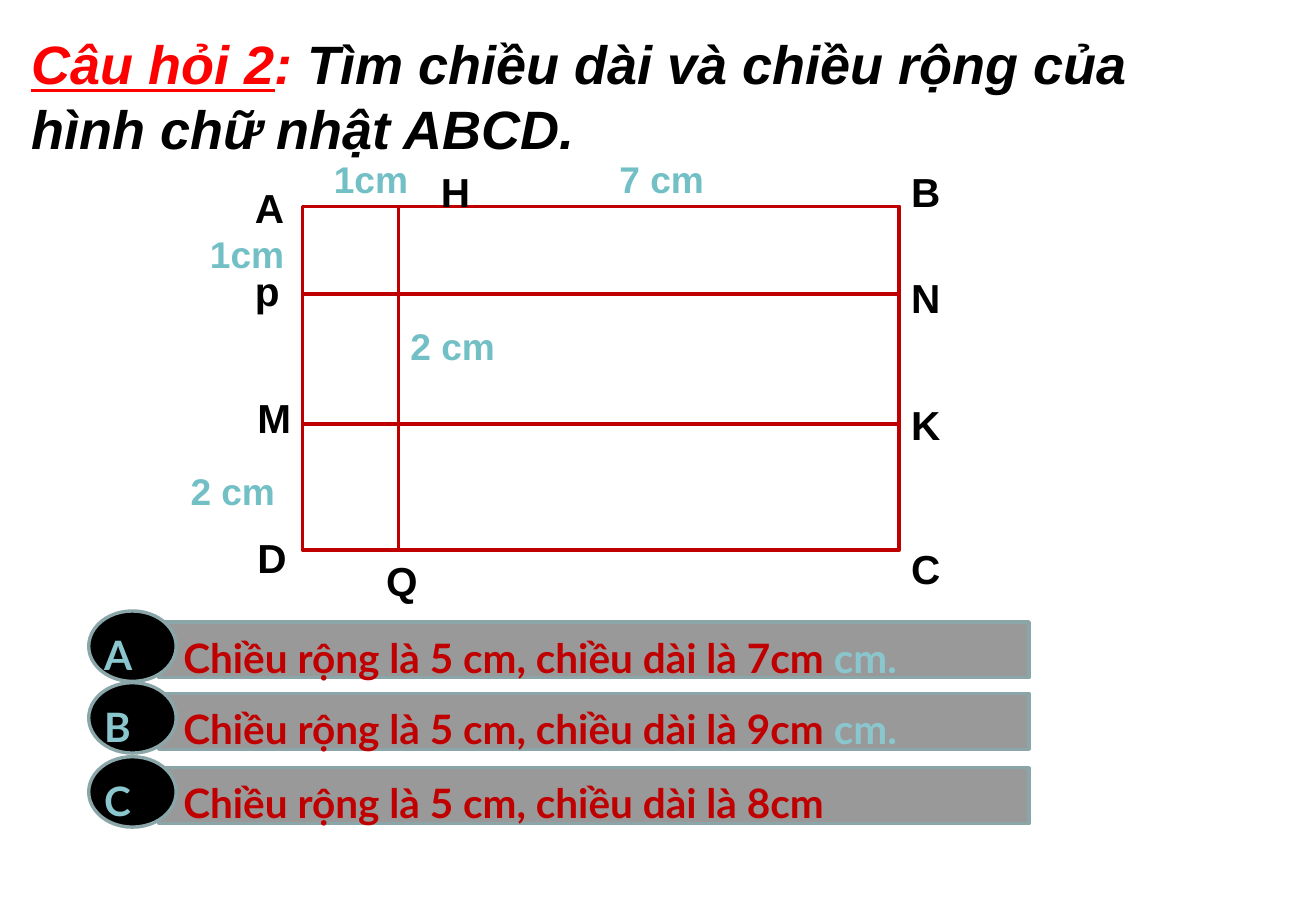
from lxml import etree
from pptx import Presentation
from pptx import util as u
from pptx.dml.color import RGBColor
from pptx.enum import shapes, text
from pptx.oxml import ns

BLACK = RGBColor(0x00, 0x00, 0x00)
RED = RGBColor(0xFF, 0x00, 0x00)
CRIMSON = RGBColor(0xC0, 0x00, 0x00)
TEAL = RGBColor(0x72, 0xBF, 0xC5)
PALE_TEAL = RGBColor(0x8A, 0xC6, 0xCD)
GREY = RGBColor(0x99, 0x99, 0x99)
EDGE = RGBColor(0x8A, 0xA6, 0xA8)

RECT = shapes.MSO_SHAPE.RECTANGLE
OVAL = shapes.MSO_SHAPE.OVAL


def px(length):
    return u.Emu(length * 9144)


def add_run(paragraph, words, font="Arial", size=24, color=BLACK, bold=True, italic=None, underline=None):
    run = paragraph.add_run()
    run.text = words
    style = run.font
    style.name, style.size = font, u.Pt(size)
    style.bold, style.italic, style.underline = bold, italic, underline
    style.color.rgb = color


class QuizSlide:
    """Draws the quiz elements on one slide in a shared style."""

    def __init__(self, deck):
        self.slide = deck.slides.add_slide(deck.slide_layouts[6])
        self.figure_line = (CRIMSON, 2.25)
        self.answer_line = (EDGE, 2)

    def outline(self, item, style):
        item.line.color.rgb = style[0]
        item.line.width = u.Pt(style[1])

    def shape(self, kind, x, y, w, h, line, fill=None):
        item = self.slide.shapes.add_shape(kind, px(x), px(y), px(w), px(h))
        item.shadow.inherit = False
        if fill is None:
            item.fill.background()
        else:
            item.fill.solid()
            item.fill.fore_color.rgb = fill
        self.outline(item, line)

    def segment(self, x1, y1, x2, y2):
        item = self.slide.shapes.add_connector(
            shapes.MSO_CONNECTOR.STRAIGHT, px(x1), px(y1), px(x2), px(y2))
        self.outline(item, self.figure_line)
        etree.SubElement(item._element.spPr, ns.qn("a:effectLst"))

    def label(self, x, y, w, h, *runs, **style):
        frame = self.slide.shapes.add_textbox(px(x), px(y), px(w), px(h)).text_frame
        frame.word_wrap = True
        frame.auto_size = text.MSO_AUTO_SIZE.SHAPE_TO_FIT_TEXT
        for words, own in runs:
            add_run(frame.paragraphs[0], words, **{**style, **own})

    def answer(self, y, letter, sentence, ending):
        self.shape(RECT, 131, y, 716, 46, self.answer_line, GREY)
        self.shape(OVAL, 73, y - 9, 72, 58, self.answer_line, BLACK)
        runs = [(sentence, {"color": CRIMSON})]
        if ending:
            runs.append((ending, {"color": PALE_TEAL}))
        self.label(141, y + 4, 645, 50, *runs, font="Lato")
        self.label(76, y + 2, 57, 50, (letter, {"color": PALE_TEAL}), font="Lato")


def main():
    deck = Presentation()
    deck.slide_width, deck.slide_height = px(1083), px(750)
    quiz = QuizSlide(deck)

    left, top, width, height = 249, 170, 491, 283
    right, bottom = left + width, top + height
    quiz.shape(RECT, left, top, width, height, quiz.figure_line)
    for row in (242, 349):
        quiz.segment(left, row, right, row)
    quiz.segment(328, top, 328, bottom)

    corners = [("A", 200, 146), ("B", 740, 133), ("C", 740, 443), ("D", 202, 434),
               ("M", 202, 319), ("H", 353, 133), ("N", 740, 220), ("K", 740, 324),
               ("Q", 308, 453), ("p", 200, 214)]
    for name, x, y in corners:
        quiz.label(x, y, 46, 50, (name, {}))

    measures = [("1cm", 265, 124), ("1cm", 163, 186), ("2 cm", 328, 261),
                ("2 cm", 147, 381), ("7 cm", 500, 124)]
    for measure, x, y in measures:
        quiz.label(x, y, 103, 47, (measure, {}), size=22, color=TEAL)

    quiz.label(16, 20, 964, 118,
               ("Câu hỏi 2", {"color": RED, "underline": True}),
               (": ", {"color": RED}),
               ("Tìm chiều dài và chiều rộng của hình chữ nhật ABCD.", {}),
               size=32, italic=True)

    answers = [(512, "A", "Chiều rộng là 5 cm, chiều dài là 7cm ", "cm."),
               (571, "B", "Chiều rộng là 5 cm, chiều dài là 9cm ", "cm."),
               (632, "C", "Chiều rộng là 5 cm, chiều dài là 8cm", "")]
    for y, letter, sentence, ending in answers:
        quiz.answer(y, letter, sentence, ending)

    deck.save("out.pptx")


if __name__ == "__main__":
    main()
